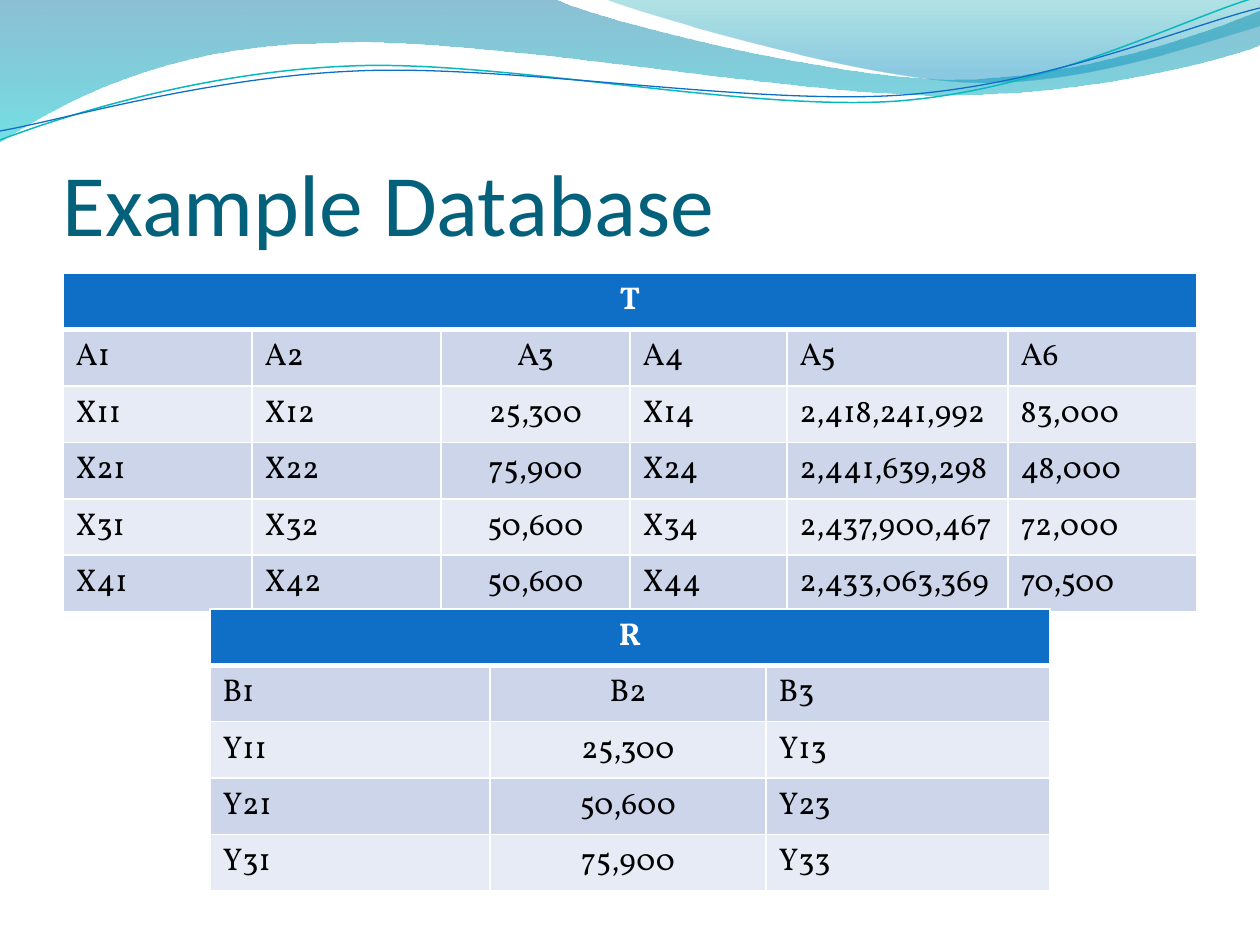
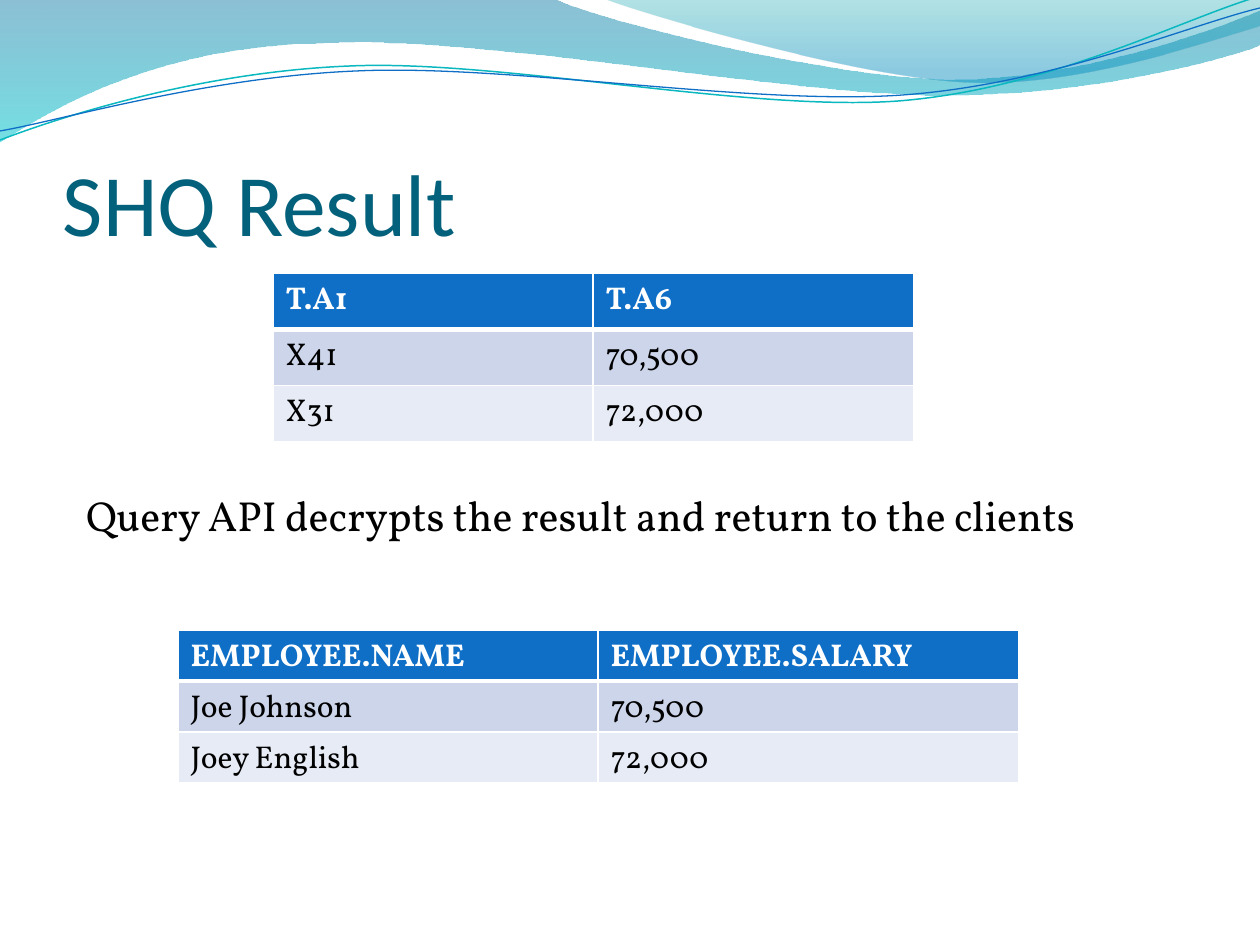
from dataclasses import dataclass

from lxml import etree
from pptx import Presentation
from pptx.dml.color import RGBColor
from pptx.enum.text import MSO_ANCHOR, PP_ALIGN
from pptx.oxml.ns import qn
from pptx.util import Emu, Pt

LEFT, CENTER = PP_ALIGN.LEFT, PP_ALIGN.CENTER
TOP, BOTTOM = MSO_ANCHOR.TOP, MSO_ANCHOR.BOTTOM
BLANK_LAYOUT = 6
EMU_PER_PX = 914400 / 126
PAGE_WIDTH, PAGE_HEIGHT = 1260, 945


@dataclass(frozen=True)
class Theme:
    title_font: str = "Calibri"
    body_font: str = "Vollkorn"
    title_size: int = 50
    body_size: int = 24
    table_size: int = 18
    title: str = "04617B"
    text: str = "000000"
    white: str = "FFFFFF"
    accent: str = "0F6FC6"
    teal: str = "0AB8BF"
    row_bands: tuple = ("E7EBF5", "CCD5EA")
    # Gradient stops: position, colour, opacity in percent
    wave_gradient: tuple = ((0, "0074A1", 45), (100, "00C6CF", 55))
    crest_gradient: tuple = ((0, "00A1A9", 30), (80, "008BBF", 45))


# Wave outlines: a start point, then steps of one point (line) or three (curve)
WAVE = ((0, 0), [
    [(554, -1)],
    [(600, 21), (837, 79), (955, 79)],
    [(1075, 79), (1207, 33), (1260, 11)],
    [(1261, 45)],
    [(1239, 55), (1096, 96), (940, 95)],
    [(784, 95), (481, 35), (324, 43)],
    [(163, 45), (58, 105), (-1, 142)],
])
CREST = ((604, -1), [
    [(641, 14), (859, 78), (969, 82)],
    [(1079, 87), (1211, 40), (1260, 26)],
    [(1260, 0)],
])
TEAL_LINE = ((0, 140), [
    [(60, 117), (199, 72), (349, 66)],
    [(498, 59), (747, 112), (898, 101)],
    [(1050, 89), (1182, 19), (1257, -3)],
])
BLUE_LINE = ((0, 131), [
    [(59, 121), (207, 77), (357, 71)],
    [(508, 64), (752, 106), (903, 95)],
    [(1053, 84), (1186, 26), (1260, 8)],
])


def px(length):
    return Emu(round(length * EMU_PER_PX))


def color(value):
    return RGBColor.from_string(value)


def bend(shape, steps):
    """Turn each run of three line segments into one cubic curve."""
    segments = iter(list(shape._element.iter(qn("a:lnTo"))))
    for step in steps:
        first, *others = [next(segments) for _ in step]
        if others:
            first.tag = qn("a:cubicBezTo")
            for segment in others:
                first.append(segment[0])
                segment.getparent().remove(segment)


def write_text(frame, text, *, font, size, ink, bold=False, align=LEFT):
    para = frame.paragraphs[0]
    para.alignment = align
    span = para.add_run()
    span.text = text
    span.font.name = font
    span.font.size = Pt(size)
    span.font.bold = bold
    span.font.color.rgb = color(ink)


def set_borders(cell, ink, **widths):
    """Draw cell borders; the sides are L, R, T and B, in points."""
    properties = cell._tc.get_or_add_tcPr()
    for side in "LRTB":
        line = etree.SubElement(properties, qn(f"a:ln{side}"),
                                w=str(Pt(widths.get(side, 1))))
        fill = etree.SubElement(line, qn("a:solidFill"))
        etree.SubElement(fill, qn("a:srgbClr"), val=ink)


class SlideBuilder:
    def __init__(self, deck, theme):
        self.deck = deck
        self.theme = theme
        self.page = None

    def add_page(self, title):
        """Start a slide with the shared waves and title."""
        theme = self.theme
        layout = self.deck.slide_layouts[BLANK_LAYOUT]
        self.page = self.deck.slides.add_slide(layout)
        self.page.background.fill.solid()
        self.page.background.fill.fore_color.rgb = color(theme.white)
        self.wave(WAVE, theme.wave_gradient)
        self.wave(CREST, theme.crest_gradient)
        self.wave_line(TEAL_LINE, theme.teal, 0.85)
        self.wave_line(BLUE_LINE, theme.accent, 0.75)
        self.text(title, 63, 97, 1134, 157, anchor=BOTTOM, insets=(0, 6, 0, 0),
                  font=theme.title_font, size=theme.title_size, ink=theme.title)

    def outline(self, outline, close):
        start, steps = outline
        points = [(px(x), px(y)) for step in steps for x, y in step]
        builder = self.page.shapes.build_freeform(*map(px, start))
        builder.add_line_segments(points, close=close)
        shape = builder.convert_to_shape()
        bend(shape, steps)
        shape.shadow.inherit = False
        return shape

    def wave(self, outline, gradient):
        shape = self.outline(outline, close=True)
        shape.line.fill.background()
        shape.fill.gradient()
        shape.fill.gradient_angle = 270
        for stop, (position, ink, _) in zip(shape.fill.gradient_stops, gradient):
            stop.position = position / 100
            stop.color.rgb = color(ink)
        inks = list(shape._element.spPr.iter(qn("a:srgbClr")))
        for ink, (_, _, opacity) in zip(inks, gradient):
            etree.SubElement(ink, qn("a:alpha"), val=str(opacity * 1000))

    def wave_line(self, outline, ink, width):
        shape = self.outline(outline, close=False)
        shape.fill.background()
        shape.line.color.rgb = color(ink)
        shape.line.width = Pt(width)

    def text(self, text, left, top, width, height, *, anchor=TOP,
             insets=(13, 6, 13, 6), **style):
        box = self.page.shapes.add_textbox(px(left), px(top), px(width), px(height))
        frame = box.text_frame
        frame.word_wrap = True
        frame.vertical_anchor = anchor
        (frame.margin_left, frame.margin_top,
         frame.margin_right, frame.margin_bottom) = map(px, insets)
        write_text(frame, text, **style)

    def table(self, rows, left, top, widths, height, *, caption=None, centered=None):
        """Add a banded table; a caption becomes one merged header row."""
        theme = self.theme
        if caption:
            rows = [[caption] + [""] * (len(widths) - 1), *rows]
        frame = self.page.shapes.add_table(
            len(rows), len(widths), px(left), px(top), px(sum(widths)), px(height))
        table = frame.table
        for column, width in zip(table.columns, widths):
            column.width = px(width)
        for r, values in enumerate(rows):
            table.rows[r].height = px(height / len(rows))
            header = r == 0
            for c, value in enumerate(values):
                cell = table.cell(r, c)
                set_borders(cell, theme.white, T=3 if r == 1 else 1,
                            B=3 if header else 1)
                cell.fill.solid()
                cell.fill.fore_color.rgb = color(
                    theme.accent if header else theme.row_bands[r % 2])
                if value:
                    middle = c == centered or (header and caption)
                    write_text(cell.text_frame, value, font=theme.body_font,
                               size=theme.table_size, bold=header,
                               ink=theme.white if header else theme.text,
                               align=CENTER if middle else LEFT)
        if caption:
            table.cell(0, 0).merge(table.cell(0, len(widths) - 1))


def add_example_database(slides):
    slides.add_page("Example Database")
    slides.table([
        ["A1", "A2", "A3", "A4", "A5", "A6"],
        ["X11", "X12", "25,300", "X14", "2,418,241,992", "83,000"],
        ["X21", "X22", "75,900", "X24", "2,441,639,298", "48,000"],
        ["X31", "X32", "50,600", "X34", "2,437,900,467", "72,000"],
        ["X41", "X42", "50,600", "X44", "2,433,063,369", "70,500"],
    ], 63, 273, [189, 189, 189, 157, 221, 189], 339, caption="T", centered=2)
    slides.table([
        ["B1", "B2", "B3"],
        ["Y11", "25,300", "Y13"],
        ["Y21", "50,600", "Y23"],
        ["Y31", "75,900", "Y33"],
    ], 210, 609, [280, 276, 284], 282, caption="R", centered=1)


def add_query_result(slides):
    theme = slides.theme
    slides.add_page("SHQ Result")
    slides.table([
        ["T.A1", "T.A6"],
        ["X41", "70,500"],
        ["X31", "72,000"],
    ], 273, 273, [320, 321], 169)
    slides.text("Query API decrypts the result and return to the clients",
                73, 484, 1113, 63, font=theme.body_font,
                size=theme.body_size, ink=theme.text)
    slides.table([
        ["EMPLOYEE.NAME", "EMPLOYEE.SALARY"],
        ["Joe Johnson", "70,500"],
        ["Joey English", "72,000"],
    ], 178, 630, [420, 421], 153)


def main():
    deck = Presentation()
    deck.slide_width, deck.slide_height = px(PAGE_WIDTH), px(PAGE_HEIGHT)
    slides = SlideBuilder(deck, Theme())
    add_example_database(slides)
    add_query_result(slides)
    deck.save("out.pptx")


if __name__ == "__main__":
    main()
